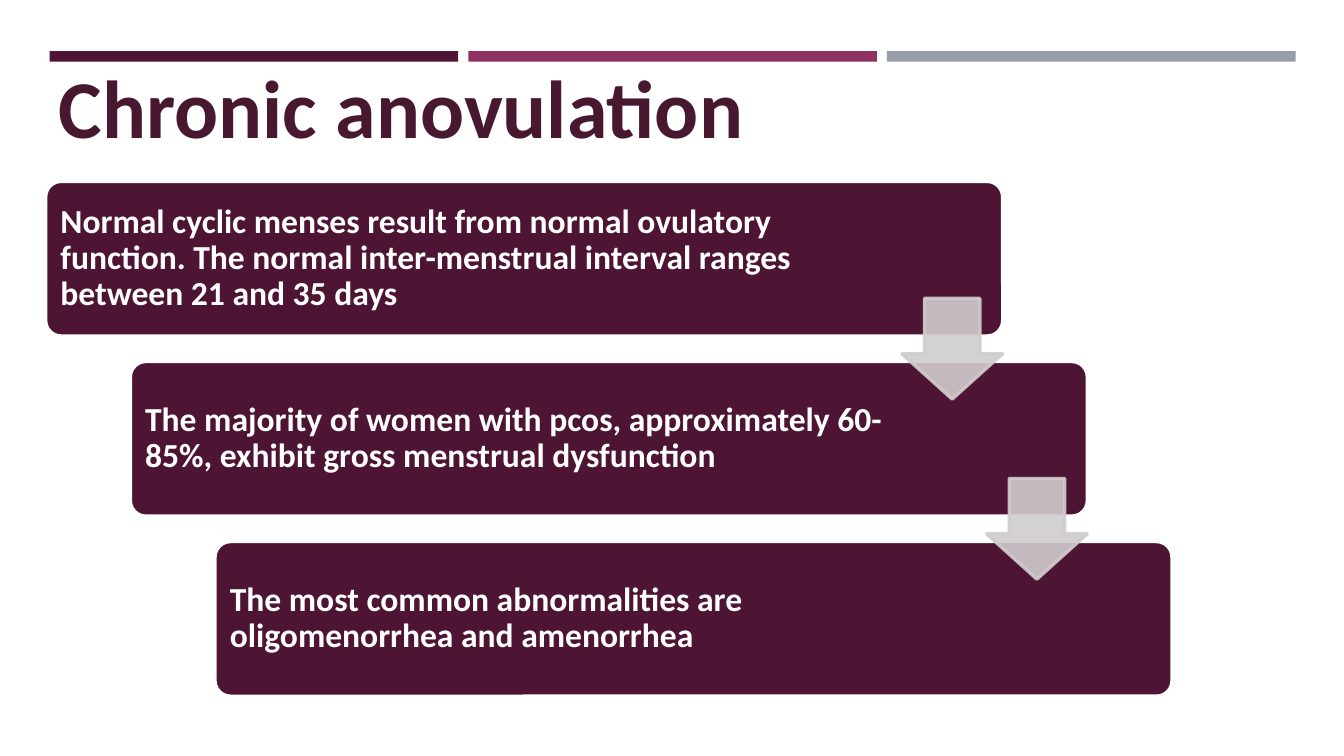
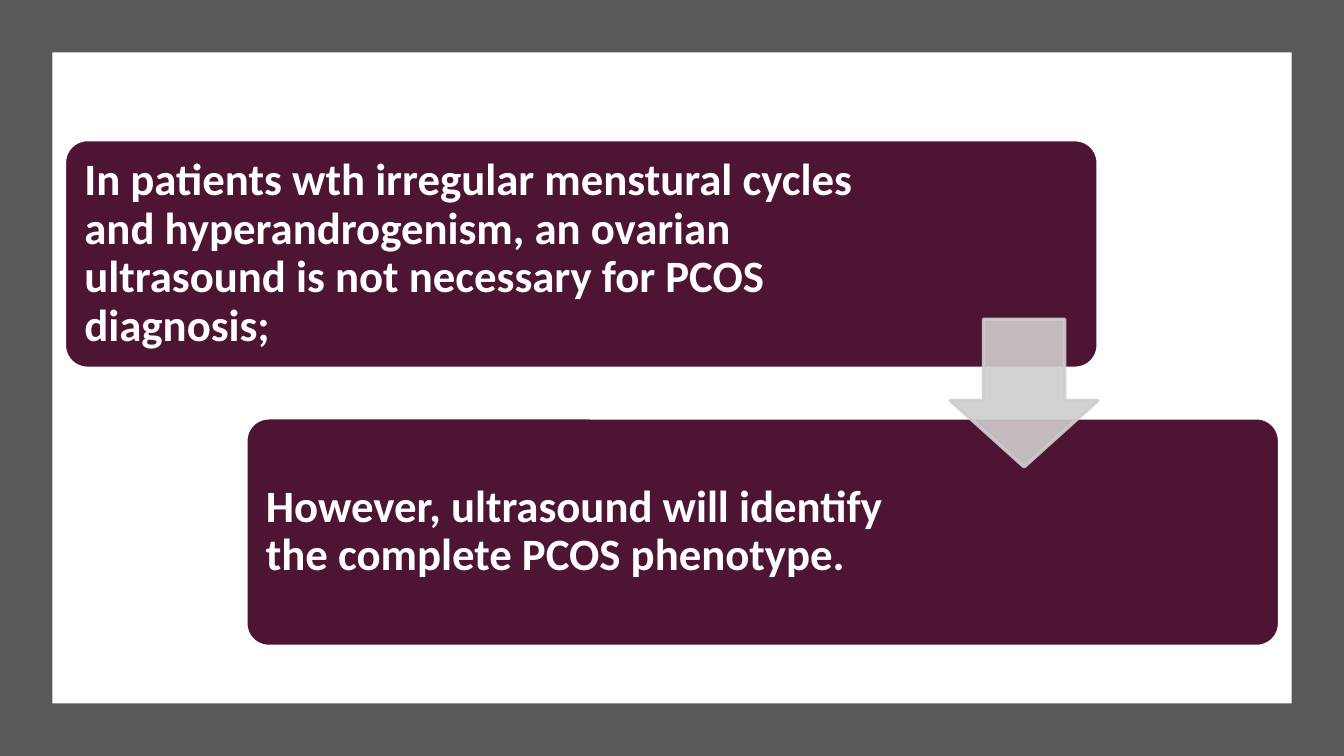
from dataclasses import dataclass

from pptx import Presentation, util as u
from pptx.dml.color import RGBColor
from pptx.enum import shapes, text
from pptx.oxml.ns import qn
from lxml import etree

WIDTH = 10
HEIGHT = WIDTH * 9 / 16
FONT = "Calibri"
PLUM, MAGENTA, SLATE = "4D1434", "903163", "969FA7"
TITLE_COLOR, ARROW_COLOR = "481831", "D0CCCE"
WHITE, FRAME_GRAY = "FFFFFF", "595959"


@dataclass
class Staircase:
    """Measurements, in inches, of cards that step down to the right."""
    left: float
    top: float
    width: float
    height: float
    step_x: float
    step_y: float
    padding: float
    inset: float
    arrow: float
    size: int


def color(hex_code):
    return RGBColor.from_string(hex_code)


def add_shape(page, kind, left, top, width, height, fill, line=None):
    shape = page.shapes.add_shape(
        kind, u.Inches(left), u.Inches(top), u.Inches(width), u.Inches(height))
    shape.shadow.inherit = False
    shape.fill.solid()
    shape.fill.fore_color.rgb = color(fill)
    if line:
        shape.line.color.rgb = color(line)
        shape.line.width = u.Pt(1.75)
    else:
        shape.line.fill.background()
    return shape


def add_rectangle(page, left, top, width, height, fill):
    return add_shape(page, shapes.MSO_SHAPE.RECTANGLE,
                     left, top, width, height, fill)


def add_text(page, words, left, top, width, height, size, ink,
             inset=0.1, anchor=text.MSO_ANCHOR.TOP, spacing=1.0):
    box = page.shapes.add_textbox(
        u.Inches(left), u.Inches(top), u.Inches(width), u.Inches(height))
    frame = box.text_frame
    frame.word_wrap = True
    frame.vertical_anchor = anchor
    frame.margin_left = frame.margin_right = u.Inches(inset)
    frame.margin_top = frame.margin_bottom = u.Inches(inset)
    frame.text = words
    para = frame.paragraphs[0]
    para.line_spacing = spacing
    font = para.runs[0].font
    font.name, font.size, font.bold = FONT, u.Pt(size), True
    font.color.rgb = color(ink)


def add_arrow(page, left, top, size):
    """Add a slightly transparent down arrow."""
    arrow = add_shape(page, shapes.MSO_SHAPE.DOWN_ARROW,
                      left, top, size, size, ARROW_COLOR, ARROW_COLOR)
    arrow.adjustments[0], arrow.adjustments[1] = 0.55, 0.45
    for tint in arrow.element.spPr.iter(qn("a:srgbClr")):
        etree.SubElement(tint, qn("a:alpha")).set("val", "90000")


def add_staircase(page, stairs, steps):
    """Add one card per (words, text width), then arrows across the gaps."""
    for index, (words, text_width) in enumerate(steps):
        left = stairs.left + index * stairs.step_x
        top = stairs.top + index * stairs.step_y
        card = add_shape(page, shapes.MSO_SHAPE.ROUNDED_RECTANGLE, left, top,
                         stairs.width, stairs.height, PLUM, WHITE)
        card.adjustments[0] = 0.1
        add_text(page, words, left + stairs.padding, top + stairs.padding,
                 text_width, stairs.height - 2 * stairs.padding,
                 stairs.size, WHITE, stairs.inset,
                 text.MSO_ANCHOR.MIDDLE, 0.9)
    first_left = stairs.left + stairs.width - stairs.arrow
    gap_middle = stairs.top + (stairs.height + stairs.step_y) / 2
    for index in range(len(steps) - 1):
        add_arrow(page, first_left + index * stairs.step_x,
                  gap_middle - stairs.arrow / 2 + index * stairs.step_y,
                  stairs.arrow)


def add_page(deck):
    page = deck.slides.add_slide(deck.slide_layouts[6])
    page.background.fill.solid()
    page.background.fill.fore_color.rgb = color(WHITE)
    return page


def add_top_bands(page):
    first, last = 0.37, 6.6
    for index, fill in enumerate((PLUM, MAGENTA, SLATE)):
        left = first + index * (last - first) / 2
        add_rectangle(page, left, 0.38, 3.04, 0.08, fill)


def build_anovulation(deck):
    page = add_page(deck)
    add_top_bands(page)
    add_text(page, "Chronic anovulation", 0.34, 0.32, 9.32, 0.8,
             44, TITLE_COLOR)
    stairs = Staircase(left=0.34, top=1.35, width=7.12, height=1.15,
                       step_x=0.63, step_y=1.34, padding=0.04,
                       inset=0.07, arrow=0.75, size=18)
    add_staircase(page, stairs, [
        ("Normal cyclic menses result from normal ovulatory function. "
         "The normal inter-menstrual interval ranges between 21 and 35 days",
         5.88),
        ("The majority of women with pcos, approximately 60-85%, "
         "exhibit gross menstrual dysfunction", 5.65),
        ("The most common abnormalities are oligomenorrhea and amenorrhea",
         5.65),
    ])


def build_ultrasound(deck):
    page = add_page(deck)
    border = 0.39
    add_rectangle(page, 0, 0, WIDTH, HEIGHT, FRAME_GRAY)
    add_rectangle(page, border, border,
                  WIDTH - 2 * border, HEIGHT - 2 * border, WHITE)
    stairs = Staircase(left=0.48, top=1.04, width=7.69, height=1.7,
                       step_x=1.35, step_y=2.07, padding=0.05,
                       inset=0.1, arrow=1.1, size=24)
    add_staircase(page, stairs, [
        ("In patients wth irregular menstural cycles and hyperandrogenism, "
         "an ovarian ultrasound is not necessary for PCOS diagnosis;", 5.94),
        ("However, ultrasound will identify the complete PCOS phenotype.",
         5.13),
    ])


def main():
    deck = Presentation()
    deck.slide_width = u.Inches(WIDTH)
    deck.slide_height = u.Inches(HEIGHT)
    build_anovulation(deck)
    build_ultrasound(deck)
    deck.save("out.pptx")


if __name__ == "__main__":
    main()
